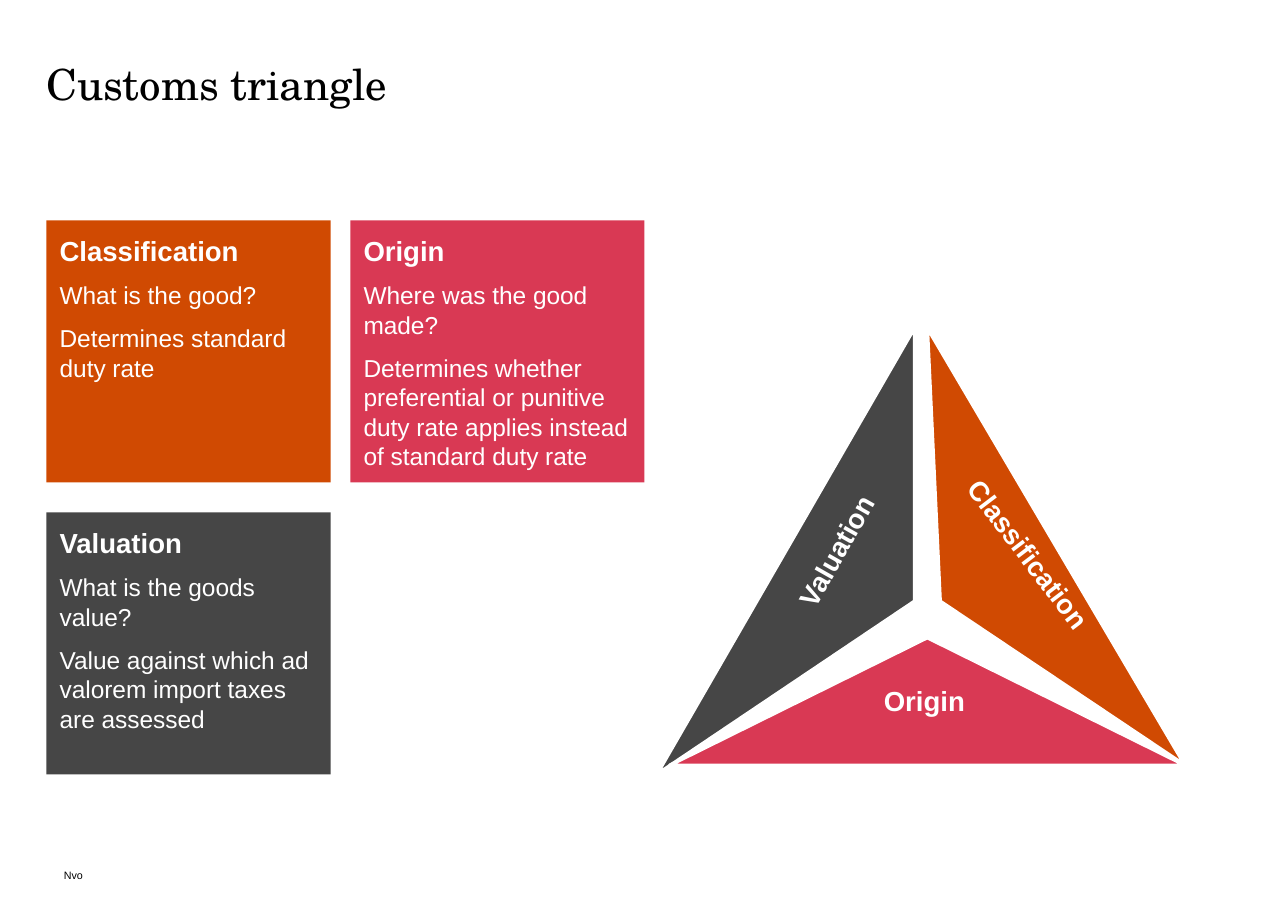
from pptx import Presentation
from pptx.dml.color import RGBColor
from pptx.enum.shapes import MSO_SHAPE as Preset
from pptx.enum.text import MSO_ANCHOR as Anchor, MSO_AUTO_SIZE as AutoSize, PP_ALIGN as Align
from pptx.util import Inches, Pt

WIDTH, HEIGHT = Inches(11.69), Inches(8.27)
COLUMN, ROW = WIDTH / 100, HEIGHT / 100

BLACK = RGBColor(0x00, 0x00, 0x00)
WHITE = RGBColor(0xFF, 0xFF, 0xFF)
ORANGE = RGBColor(0xD0, 0x4A, 0x02)
ROSE = RGBColor(0xD9, 0x39, 0x54)
GREY = RGBColor(0x46, 0x46, 0x46)

MARGIN, CARDS_TOP = 3.6, 24.18
CARD_WIDTH, CARD_HEIGHT = 22.07, 28.78
CARD_STEP_X, CARD_STEP_Y = 23.6, 32.05

CARDS = [
    (0, 0, CARD_WIDTH, ORANGE, "Classification", "What is the good?",
     "Determines standard duty rate"),
    (1, 0, 22.84, ROSE, "Origin", "Where was the good made?",
     "Determines whether preferential or punitive duty rate applies instead "
     "of standard duty rate"),
    (0, 1, CARD_WIDTH, GREY, "Valuation", "What is the goods value?",
     "Value against which ad valorem import taxes are assessed"),
]

SIDES = [
    (GREY, [(70.57, 35.6), (71.17, 66.14), (50.73, 85)],
     "Valuation", (64.71, 60.28), (13.6, 3.02), 299.6),
    (ORANGE, [(72.46, 35.6), (72.71, 65.78), (92.3, 83.68)],
     "Classification", (80.07, 60.58), (15.4, 2.9), 52.7),
    (ROSE, [(51.75, 84.28), (91.7, 84.28), (71.86, 69.53)],
     "Origin", (71.77, 76.9), (8.04, 3.63), 0),
]


def place(left, top, width, height):
    return (round(left * COLUMN), round(top * ROW),
            round(width * COLUMN), round(height * ROW))


def prepare(frame, inset=0, anchor=Anchor.TOP):
    frame.word_wrap = True
    frame.auto_size = AutoSize.NONE
    frame.vertical_anchor = anchor
    frame.margin_left = frame.margin_right = Inches(inset)
    frame.margin_top = frame.margin_bottom = Inches(inset)
    return frame


def write(paragraph, text, size=18, color=WHITE, bold=False,
          font="Arial", align=Align.LEFT, before=0):
    paragraph.alignment = align
    paragraph.space_before = Pt(before)
    run = paragraph.add_run()
    run.text = text
    run.font.name = font
    run.font.size = Pt(size)
    run.font.bold = bold
    run.font.color.rgb = color


def paint(shape, color):
    shape.shadow.inherit = False
    shape.fill.solid()
    shape.fill.fore_color.rgb = color


def add_title(slide, text):
    title = slide.shapes.title
    title.left, title.top, title.width, title.height = place(MARGIN, 6.29, 92.73, 10.52)
    frame = prepare(title.text_frame)
    write(frame.paragraphs[0], text, size=28, color=BLACK, font="TeX Gyre Schola")


def add_card(slide, column, row, width, color, heading, *statements):
    area = place(MARGIN + column * CARD_STEP_X, CARDS_TOP + row * CARD_STEP_Y,
                 width, CARD_HEIGHT)
    card = slide.shapes.add_shape(Preset.RECTANGLE, *area)
    paint(card, color)
    card.line.fill.background()
    frame = prepare(card.text_frame, inset=0.12)
    write(frame.paragraphs[0], heading, bold=True)
    for statement in statements:
        write(frame.add_paragraph(), statement, size=16, before=9)


def add_side(slide, color, corners):
    start, *others = corners
    builder = slide.shapes.build_freeform(*start, scale=(COLUMN, ROW))
    builder.add_line_segments(others, close=True)
    side = builder.convert_to_shape()
    paint(side, color)
    side.line.color.rgb = WHITE
    side.line.width = Pt(2.25)


def add_label(slide, text, center, size, angle):
    (x, y), (width, height) = center, size
    label = slide.shapes.add_textbox(*place(x - width / 2, y - height / 2, width, height))
    label.rotation = angle
    write(prepare(label.text_frame).paragraphs[0], text, bold=True, align=Align.CENTER)


def add_footer(slide, text):
    footer = slide.shapes.add_textbox(*place(4.96, 94.68, 43.54, 2.06))
    frame = prepare(footer.text_frame, anchor=Anchor.BOTTOM)
    write(frame.paragraphs[0], text, size=7, color=BLACK)


def main():
    deck = Presentation()
    deck.slide_width, deck.slide_height = WIDTH, HEIGHT
    slide = deck.slides.add_slide(deck.slide_layouts[5])
    add_footer(slide, "Nvo")
    add_title(slide, "Customs triangle")
    for card in CARDS:
        add_card(slide, *card)
    for color, corners, *_ in SIDES:
        add_side(slide, color, corners)
    for _, _, *label in SIDES:
        add_label(slide, *label)
    deck.save("out.pptx")


if __name__ == "__main__":
    main()
